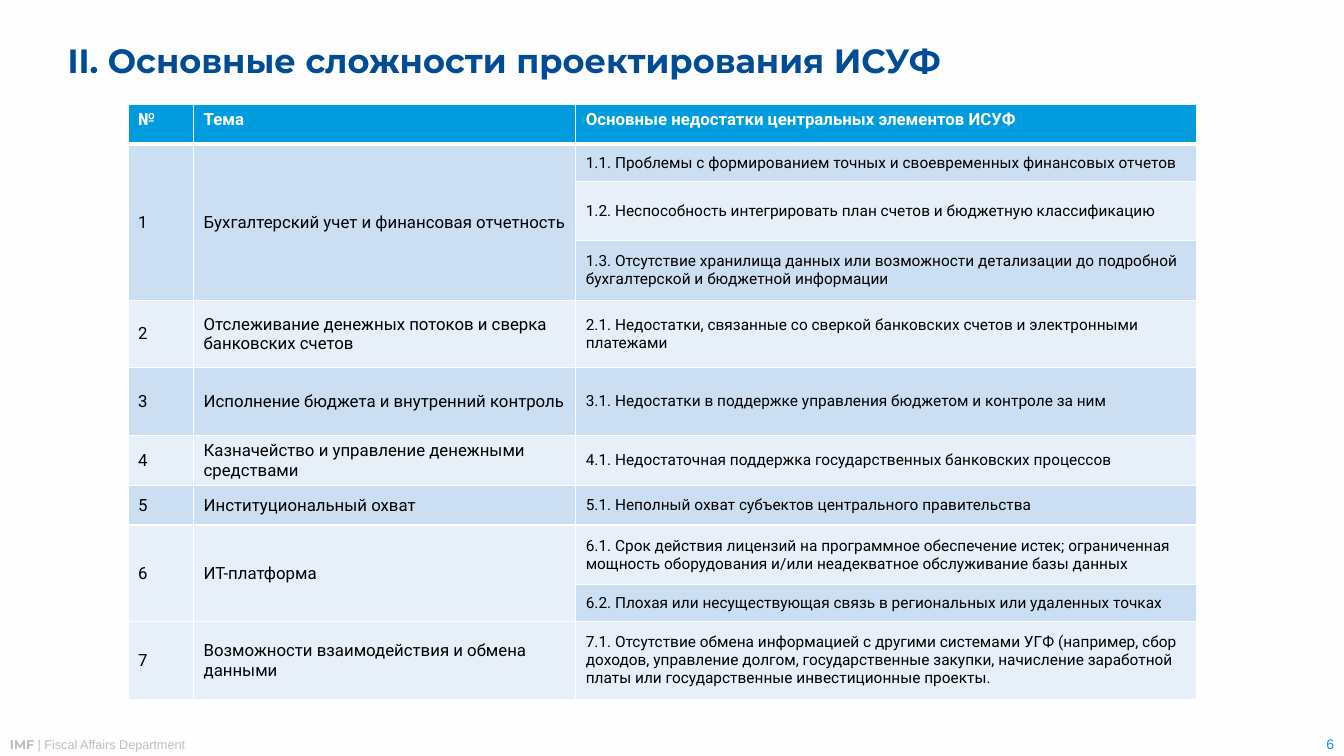
from lxml import etree
from pptx import Presentation
from pptx import util as u
from pptx.dml.color import RGBColor
from pptx.enum import text
from pptx.oxml import ns

NAVY = RGBColor(0x00, 0x4C, 0x97)
BLUE = RGBColor(0x00, 0x9C, 0xDE)
PALE = RGBColor(0xE7, 0xEF, 0xF9)
LIGHT = RGBColor(0xCC, 0xDE, 0xF2)
WHITE = RGBColor(0xFE, 0xFE, 0xFE)
BLACK = RGBColor(0x00, 0x00, 0x00)
GRAY = RGBColor(0xBE, 0xBE, 0xBE)

HEADERS = ["№", "Тема", "Основные недостатки центральных элементов ИСУФ"]
TOPICS = [
    ("Бухгалтерский учет и финансовая отчетность", [
        "Проблемы с формированием точных и своевременных финансовых отчетов",
        "Неспособность интегрировать план счетов и бюджетную классификацию",
        "Отсутствие хранилища данных или возможности детализации до подробной "
        "бухгалтерской и бюджетной информации"]),
    ("Отслеживание денежных потоков и сверка банковских счетов", [
        "Недостатки, связанные со сверкой банковских счетов и электронными платежами"]),
    ("Исполнение бюджета и внутренний контроль", [
        "Недостатки в поддержке управления бюджетом и контроле за ним"]),
    ("Казначейство и управление денежными средствами", [
        "Недостаточная поддержка государственных банковских процессов"]),
    ("Институциональный охват", [
        "Неполный охват субъектов центрального правительства"]),
    ("ИТ-платформа", [
        "Срок действия лицензий на программное обеспечение истек; ограниченная "
        "мощность оборудования и/или неадекватное обслуживание базы данных",
        "Плохая или несуществующая связь в региональных или удаленных точках"]),
    ("Возможности взаимодействия и обмена данными", [
        "Отсутствие обмена информацией с другими системами УГФ (например, сбор "
        "доходов, управление долгом, государственные закупки, начисление заработной "
        "платы или государственные инвестиционные проекты."]),
]
COLUMN_WIDTHS = [0.65, 3.79, 6.16]
ROW_HEIGHTS = [0.39, 0.37, 0.59, 0.59, 0.67, 0.67, 0.49, 0.39, 0.59, 0.37, 0.77]

presentation = Presentation()
presentation.slide_width = u.Inches(13.33)
presentation.slide_height = u.Inches(7.5)
slide = presentation.slides.add_slide(presentation.slide_layouts[6])
slide.background.fill.solid()
slide.background.fill.fore_color.rgb = WHITE


def add_text(left, top, width, height, runs, size, color, anchor):
    shape = slide.shapes.add_textbox(*map(u.Inches, (left, top, width, height)))
    frame = shape.text_frame
    frame.word_wrap = True
    frame.vertical_anchor = anchor
    for content, font_name, bold in runs:
        run = frame.paragraphs[0].add_run()
        run.text = content
        run.font.name = font_name
        run.font.bold = bold
        run.font.size = u.Pt(size)
        run.font.color.rgb = color
    return frame


def fill_cell(row, column, content):
    cell = table.cell(row, column)
    cell.text_frame.text = content
    cell.vertical_anchor = text.MSO_ANCHOR.MIDDLE if row else text.MSO_ANCHOR.TOP
    font = cell.text_frame.paragraphs[0].runs[0].font
    font.name = "Roboto"
    font.size = u.Pt(11 if row and column == 2 else 12)
    font.bold = row == 0
    font.color.rgb = BLACK if row else WHITE


add_text(0, 7.26, 10, 0.25,
         [("IMF ", "Montserrat", True), ("| Fiscal Affairs Department", "Arial", False)],
         9, GRAY, text.MSO_ANCHOR.TOP)
page_number = add_text(12.01, 7.24, 1.32, 0.27, [("6", "Arial", False)],
                       10, BLUE, text.MSO_ANCHOR.BOTTOM)
page_number.paragraphs[0].alignment = text.PP_ALIGN.RIGHT
title = add_text(0.67, 0.01, 12, 1.22,
                 [("II. Основные сложности проектирования ИСУФ", "Montserrat", True)],
                 24, NAVY, text.MSO_ANCHOR.MIDDLE)
title.margin_left = title.margin_right = title.margin_top = title.margin_bottom = 0
title.paragraphs[0].line_spacing = 0.9

table = slide.shapes.add_table(
    len(ROW_HEIGHTS), len(COLUMN_WIDTHS), u.Inches(1.27), u.Inches(1.04),
    u.Inches(sum(COLUMN_WIDTHS)), u.Inches(sum(ROW_HEIGHTS))).table
table.horz_banding = False
for column, width in enumerate(COLUMN_WIDTHS):
    table.columns[column].width = u.Inches(width)

for row, height in enumerate(ROW_HEIGHTS):
    table.rows[row].height = u.Inches(height)
    for column in range(len(COLUMN_WIDTHS)):
        cell = table.cell(row, column)
        properties = cell._tc.get_or_add_tcPr()
        for side in ("lnL", "lnR", "lnT", "lnB"):
            below_header = (row, side) in ((0, "lnB"), (1, "lnT"))
            line = etree.SubElement(properties, ns.qn("a:" + side),
                                    w=str(u.Pt(3 if below_header else 1)))
            solid = etree.SubElement(line, ns.qn("a:solidFill"))
            etree.SubElement(solid, ns.qn("a:srgbClr"), val=str(WHITE))
        cell.fill.solid()
        cell.fill.fore_color.rgb = BLUE if row == 0 else LIGHT if row % 2 else PALE

for column, header in enumerate(HEADERS):
    fill_cell(0, column, header)

row = 1
for number, (topic, problems) in enumerate(TOPICS, 1):
    last_row = row + len(problems) - 1
    for column, content in enumerate((str(number), topic)):
        if last_row > row:
            table.cell(row, column).merge(table.cell(last_row, column))
        fill_cell(row, column, content)
    for index, problem in enumerate(problems, 1):
        fill_cell(row, 2, f"{number}.{index}. {problem}")
        row += 1

presentation.save("out.pptx")
